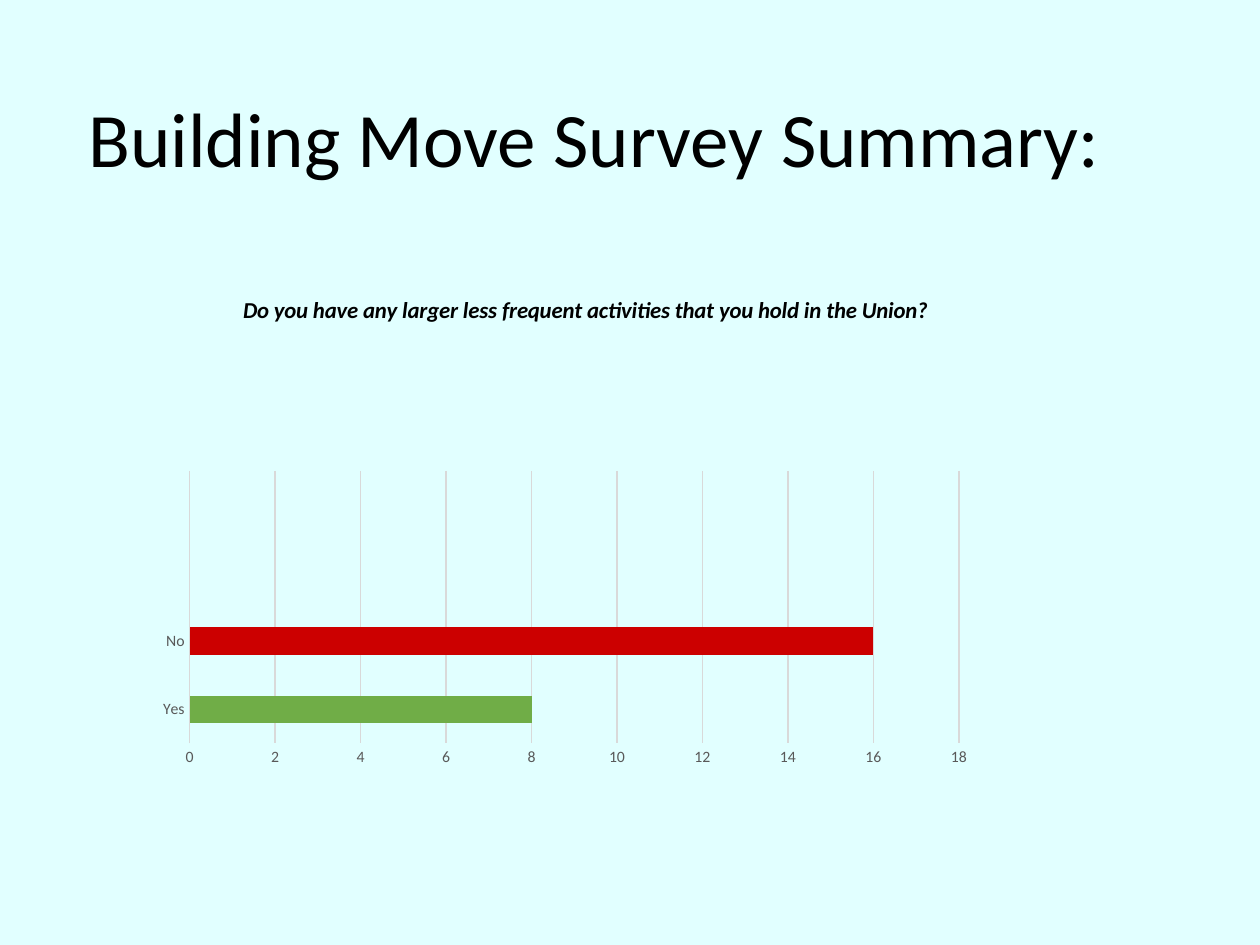
import pptx
import pptx.chart.data
import pptx.dml.color
import pptx.enum.chart
import pptx.enum.text
import pptx.util
from lxml import etree
from pptx.util import Inches

QUESTION = "Do you have any larger less frequent activities that you hold in the Union?"
ANSWERS = [("Yes", 8, "70AD47"), ("No", 16, "CC0000"), ("", None, None), ("", None, None)]


def rgb(value):
    return pptx.dml.color.RGBColor.from_string(value)


def format_font(font, size, color="000000", bold=False, italic=False, name="Calibri"):
    font.name = name
    font.size = pptx.util.Pt(size)
    font.bold = bold
    font.italic = italic
    font.color.rgb = rgb(color)


def write(tf, text, align=None, spacing=None, **fmt):
    p = tf.paragraphs[0]
    p.alignment = align
    p.line_spacing = spacing
    r = p.add_run()
    r.text = text
    format_font(r.font, **fmt)


def place(parent, **values):
    ns = parent.nsmap["c"]
    layout = parent.find(f"{{{ns}}}layout")
    if layout is None:
        layout = etree.Element(f"{{{ns}}}layout")
        tx = parent.find(f"{{{ns}}}tx")
        parent.insert(0 if tx is None else parent.index(tx) + 1, layout)
    for child in list(layout):
        layout.remove(child)
    manual = etree.SubElement(layout, f"{{{ns}}}manualLayout")
    for tag, value in values.items():
        etree.SubElement(manual, f"{{{ns}}}{tag}").set("val", str(value))


class Deck:
    grid = "D9D9D9"
    label = "595959"

    def __init__(self, background):
        self.prs = pptx.Presentation()
        self.prs.slide_width = Inches(10)
        self.prs.slide_height = Inches(7.5)
        self.s = self.prs.slides.add_slide(self.prs.slide_layouts[5])
        fill = self.s.background.fill
        fill.solid()
        fill.fore_color.rgb = rgb(background)

    def title(self, text, x, y, w, h):
        sp = self.s.shapes.title
        sp.left, sp.top, sp.width, sp.height = map(Inches, (x, y, w, h))
        tf = sp.text_frame
        tf.word_wrap = True
        tf.vertical_anchor = pptx.enum.text.MSO_ANCHOR.MIDDLE
        write(tf, text, pptx.enum.text.PP_ALIGN.LEFT, 0.9, size=44)

    def line(self, line):
        line.color.rgb = rgb(self.grid)
        line.width = pptx.util.Pt(0.75)

    def axis(self, axis):
        axis.major_tick_mark = pptx.enum.chart.XL_TICK_MARK.NONE
        axis.minor_tick_mark = pptx.enum.chart.XL_TICK_MARK.NONE
        format_font(axis.tick_labels.font, 9, self.label)

    def bar_chart(self, text, answers, x, y, w, h):
        data = pptx.chart.data.CategoryChartData()
        data.categories = [name for name, _, _ in answers]
        data.add_series(text, [value for _, value, _ in answers])
        kind = pptx.enum.chart.XL_CHART_TYPE.BAR_STACKED
        chart = self.s.shapes.add_chart(kind, *map(Inches, (x, y, w, h)), data).chart
        format_font(chart.font, 10)
        chart.has_legend = False
        chart.has_title = True
        write(chart.chart_title.text_frame, text, size=13, bold=True, italic=True)
        chart.chart_title.include_in_layout = False
        title = chart.chart_title._element
        place(title, xMode="edge", yMode="edge", x=0.16, y=0.1)

        cat, val = chart.category_axis, chart.value_axis
        self.axis(cat)
        self.axis(val)
        self.line(cat.format.line)
        val.format.line.fill.background()
        val.has_major_gridlines = True
        self.line(val.major_gridlines.format.line)
        val.minimum_scale, val.maximum_scale, val.major_unit = 0, 18, 2

        plot = chart.plots[0]
        plot.gap_width, plot.overlap = 150, 100
        plot.vary_by_categories = False
        series = plot.series[0]
        series.format.fill.solid()
        series.format.fill.fore_color.rgb = rgb("C00000")
        for i, (_, _, color) in enumerate(answers):
            if color:
                fill = series.points[i].format.fill
                fill.solid()
                fill.fore_color.rgb = rgb(color)
        place(plot._element.getparent(), layoutTarget="inner", xMode="edge",
              yMode="edge", x=0.105, y=0.418, w=0.86, h=0.482)


def main():
    deck = Deck("E1FFFF")
    deck.title("Building Move Survey Summary:", 0.6, 0.41, 8.62, 1.45)
    deck.bar_chart(QUESTION, ANSWERS, 0.76, 1.86, 7.1, 4.49)
    deck.prs.save("out.pptx")


if __name__ == "__main__":
    main()
